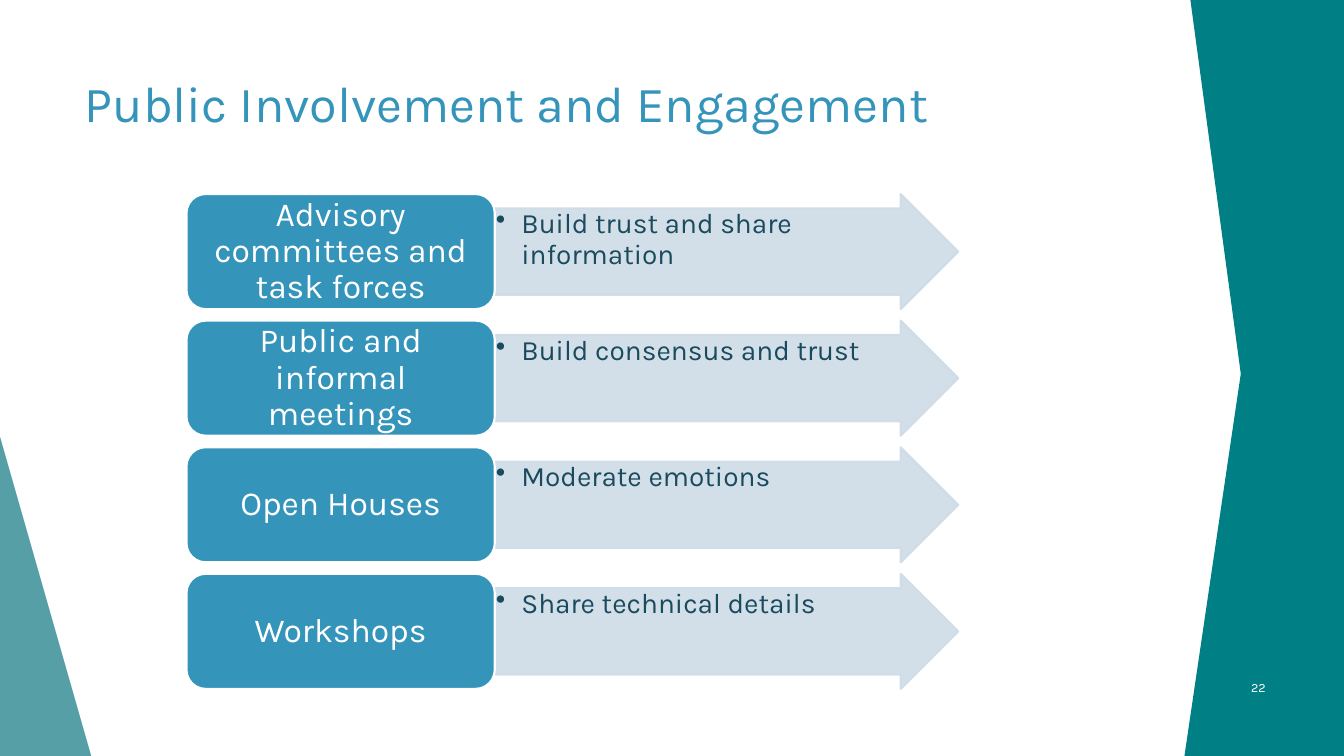
from lxml import etree
from pptx import Presentation
from pptx.dml.color import RGBColor
from pptx.enum.shapes import MSO_SHAPE
from pptx.enum.text import MSO_ANCHOR, MSO_AUTO_SIZE, PP_ALIGN
from pptx.oxml.ns import qn
from pptx.util import Cm, Pt

RIGHT_TRIANGLE = MSO_SHAPE.RIGHT_TRIANGLE
ROUNDED = MSO_SHAPE.ROUNDED_RECTANGLE
ARROW = MSO_SHAPE.RIGHT_ARROW
TOP, MIDDLE = MSO_ANCHOR.TOP, MSO_ANCHOR.MIDDLE
LEFT, CENTER, RIGHT = PP_ALIGN.LEFT, PP_ALIGN.CENTER, PP_ALIGN.RIGHT
NO_AUTOFIT = MSO_AUTO_SIZE.NONE

WHITE, BLUE, PALE, NAVY = "FFFFFF", "3494BA", "CEDCE7", "1A4A5D"
TEAL, SEA = "008085", "3A8F98"

METHODS = [
    ("Advisory committees and task forces", "Build trust and share information"),
    ("Public and informal meetings", "Build consensus and trust"),
    ("Open Houses", "Moderate emotions"),
    ("Workshops", "Share technical details"),
]
FIRST_TOP, ROW_PITCH, ROW_HEIGHT = 4.89, 3.19, 2.9
METHOD_LEFT, METHOD_WIDTH = 4.7, 7.77
PURPOSE_WIDTH = 11.68


class SlideBuilder:
    font_name = "Karla"

    def __init__(self, slide):
        self.slide = slide

    def color(self, color_format, hex_color, opacity=100):
        color_format.rgb = RGBColor.from_string(hex_color)
        if opacity < 100:
            for value in color_format._xFill.iter(qn("a:srgbClr")):
                alpha = etree.SubElement(value, qn("a:alpha"))
                alpha.set("val", str(opacity * 1000))

    def paint(self, shape, fill, opacity=100, line=None):
        shape.shadow.inherit = False
        shape.fill.solid()
        self.color(shape.fill.fore_color, fill, opacity)
        if line:
            shape.line.width = Pt(1.5)
            shape.line.fill.solid()
            self.color(shape.line.fill.fore_color, line, opacity)
        else:
            shape.line.fill.background()

    def preset(self, kind, box, fill, opacity=100, line=None):
        shape = self.slide.shapes.add_shape(kind, *map(Cm, box))
        self.paint(shape, fill, opacity, line)
        return shape

    def outline(self, points, fill):
        start, *rest = [(Cm(x), Cm(y)) for x, y in points]
        builder = self.slide.shapes.build_freeform(*start)
        builder.add_line_segments(rest, close=True)
        self.paint(builder.convert_to_shape(), fill)

    def set_text(self, shape, text, size, color, align, anchor, spacing=1.0, bullet=False):
        frame = shape.text_frame
        frame.word_wrap = True
        frame.auto_size = NO_AUTOFIT
        frame.vertical_anchor = anchor
        frame.text = text
        paragraph = frame.paragraphs[0]
        paragraph.alignment = align
        paragraph.line_spacing = spacing
        if bullet:
            properties = paragraph._p.get_or_add_pPr()
            properties.set("marL", str(Cm(0.64)))
            properties.set("indent", str(Cm(-0.64)))
            etree.SubElement(properties, qn("a:buChar")).set("char", "•")
        paragraph.font.name = self.font_name
        paragraph.font.size = Pt(size)
        self.color(paragraph.font.color, color)

    def title(self, text, box):
        title = self.slide.shapes.title
        title.left, title.top, title.width, title.height = map(Cm, box)
        self.set_text(title, text, 36, BLUE, LEFT, TOP)

    def label(self, text, box, size, color, align):
        label = self.slide.shapes.add_textbox(*map(Cm, box))
        self.set_text(label, text, size, color, align, MIDDLE)

    def purpose(self, text, top):
        box = (METHOD_LEFT + METHOD_WIDTH, top, PURPOSE_WIDTH, ROW_HEIGHT)
        arrow = self.preset(ARROW, box, PALE, 90, PALE)
        arrow.adjustments[0] = 0.75
        arrow.adjustments[1] = 0.5
        frame = arrow.text_frame
        frame.margin_left = frame.margin_top = frame.margin_bottom = Cm(0.03)
        frame.margin_right = Cm(0.75)
        self.set_text(arrow, text, 20, NAVY, LEFT, TOP, 0.9, bullet=True)

    def method(self, text, top):
        box = (METHOD_LEFT, top, METHOD_WIDTH, ROW_HEIGHT)
        card = self.preset(ROUNDED, box, BLUE, line=WHITE)
        self.set_text(card, text, 24, WHITE, CENTER, MIDDLE, 0.9)


def main():
    deck = Presentation()
    deck.slide_width, deck.slide_height = Cm(33.87), Cm(19.05)
    builder = SlideBuilder(deck.slides.add_slide(deck.slide_layouts[5]))

    builder.preset(RIGHT_TRIANGLE, (0, 11, 2.3, 8.05), SEA, 85)
    builder.outline(
        [(33.87, 0), (33.87, 19.05), (29.85, 19.05), (31.27, 9.42), (30, 0)], TEAL
    )
    builder.title("Public Involvement and Engagement", (1.88, 1.7, 27.5, 3.2))

    for row, (method, purpose) in enumerate(METHODS):
        top = FIRST_TOP + row * ROW_PITCH
        builder.purpose(purpose, top)
        builder.method(method, top)

    builder.label("22", (30.25, 16.81, 1.9, 1.02), 9, WHITE, RIGHT)
    deck.save("out.pptx")


if __name__ == "__main__":
    main()
